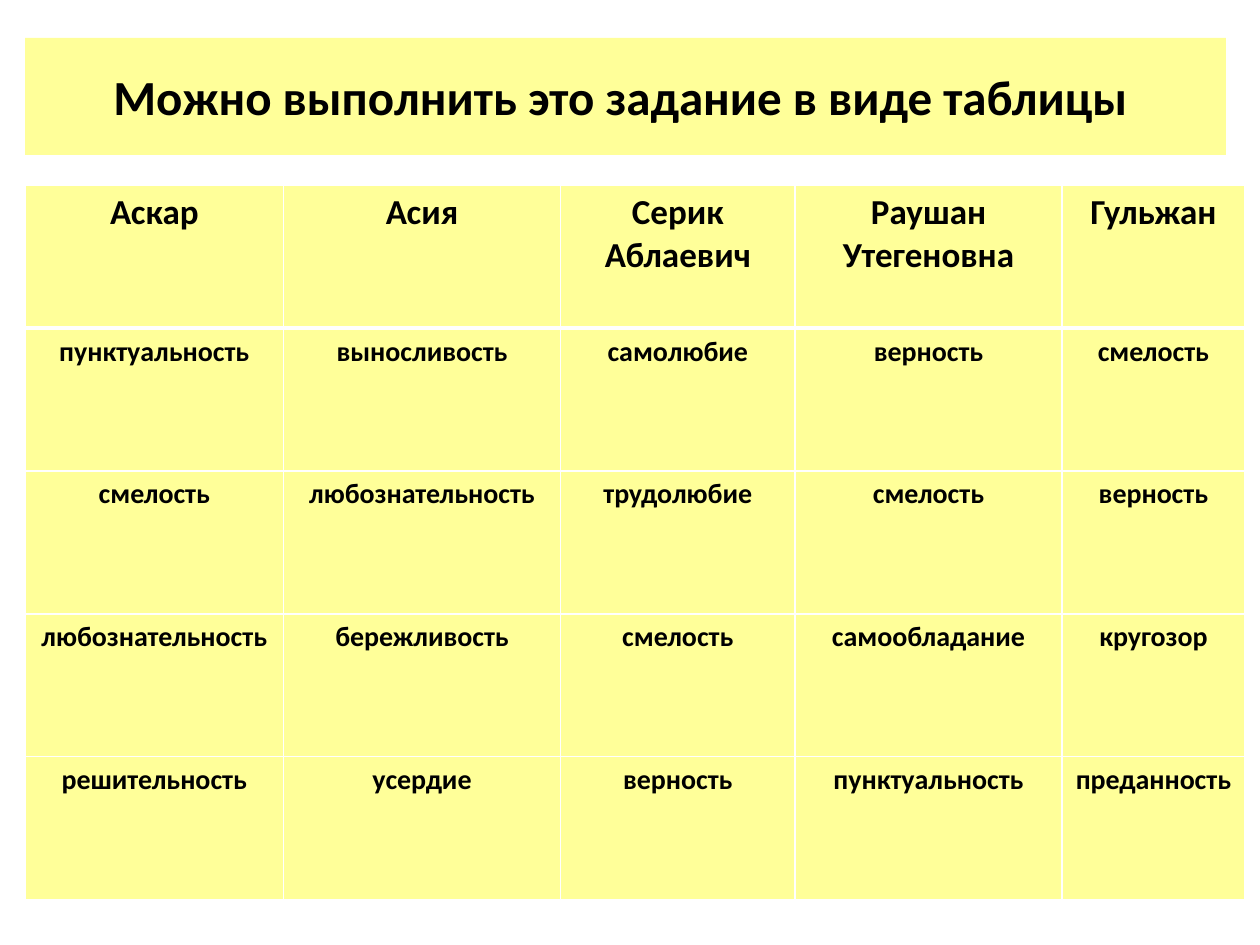
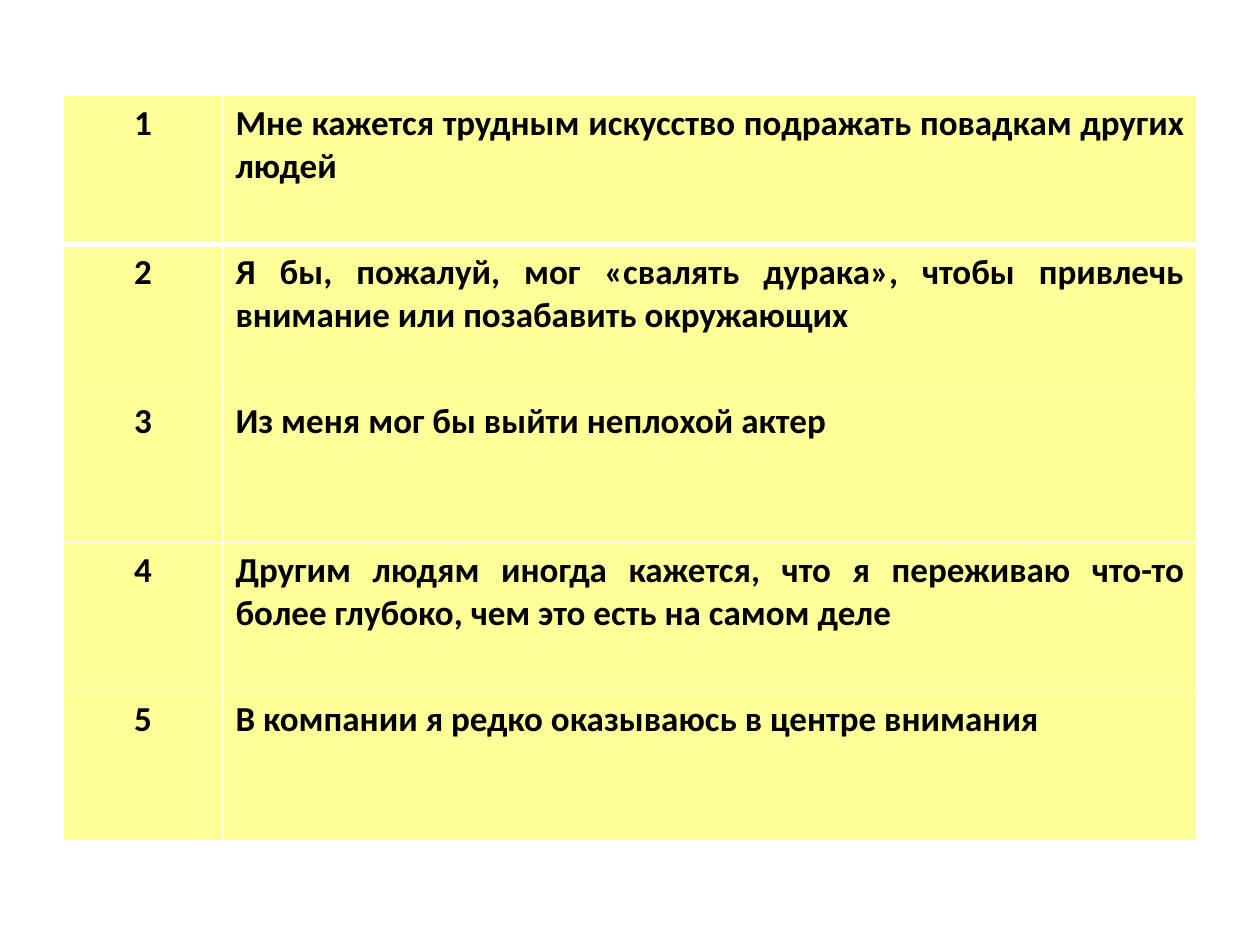
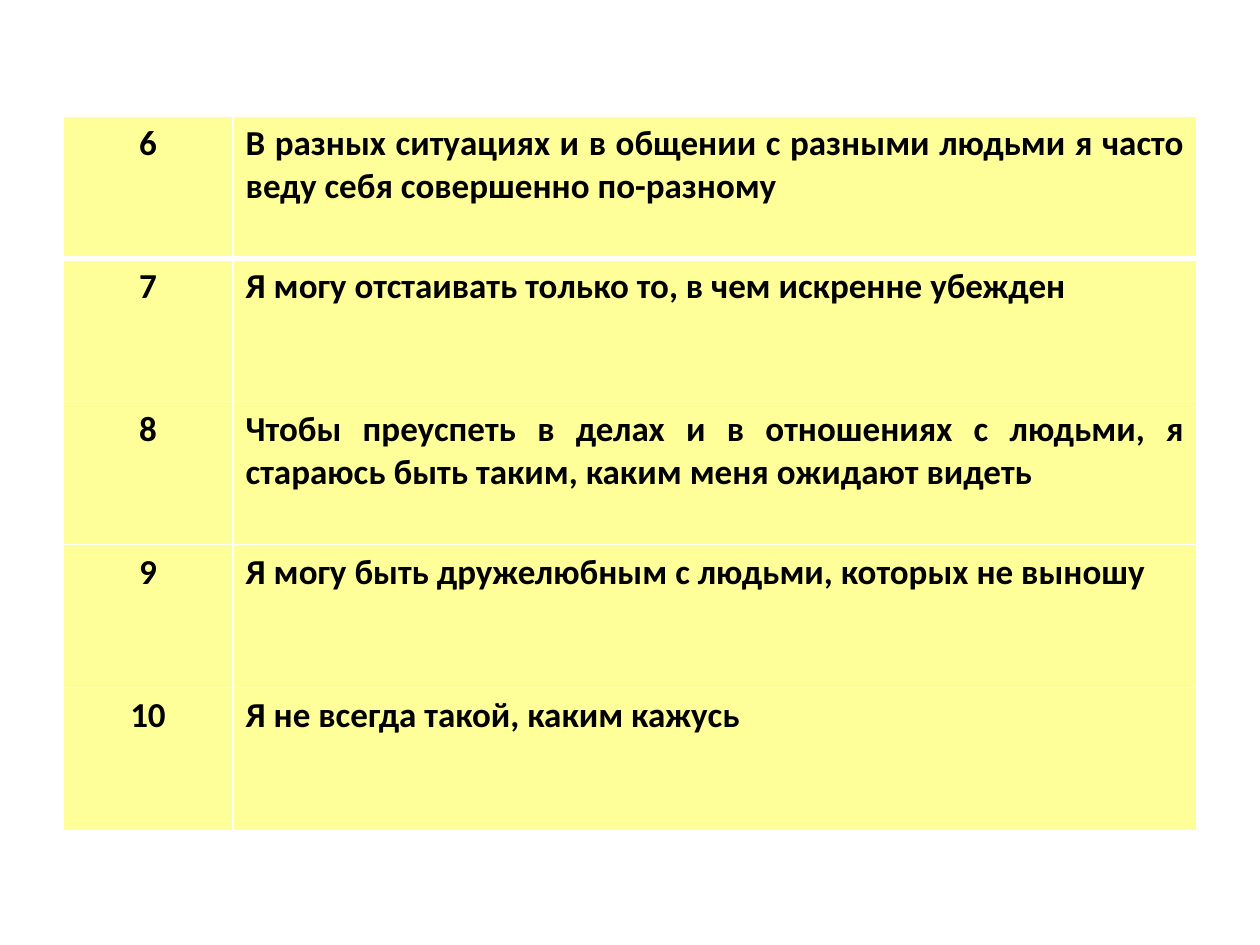
from dataclasses import dataclass

from lxml import etree
from pptx import Presentation
from pptx import util as u
from pptx.dml.color import RGBColor
from pptx.enum import text
from pptx.oxml.ns import qn

# Shared look
EMU_PER_PX = 9144  # 100 px to the inch
FONT = "Calibri"
INK = "000000"
PANEL = "FFFF99"
RULE = "FFFFFF"
TITLE_ONLY, BLANK = 5, 6
CENTER = text.PP_ALIGN.CENTER
JUSTIFY = text.PP_ALIGN.JUSTIFY


@dataclass
class Grid:
    left: int
    top: int
    height: int
    widths: list[int]
    aligns: list[text.PP_ALIGN]
    rows: list[list[str]]
    body_size: int = 20
    header_size: int = 20


def px(length: int) -> u.Emu:
    return u.Emu(length * EMU_PER_PX)


def paint(fill, color: str) -> None:
    fill.solid()
    fill.fore_color.rgb = RGBColor.from_string(color)


def write(frame, words: str, size: int, align: text.PP_ALIGN) -> None:
    frame.text = words
    paragraph = frame.paragraphs[0]
    paragraph.alignment = align
    for run in paragraph.runs:
        run.font.name = FONT
        run.font.size = u.Pt(size)
        run.font.bold = True
        run.font.color.rgb = RGBColor.from_string(INK)


def rule_cell(cell, row: int) -> None:
    """Thin rules all round, with a thick one under the first row."""
    points = {"L": 1, "R": 1, "T": 3 if row == 1 else 1, "B": 3 if row == 0 else 1}
    properties = cell._tc.get_or_add_tcPr()
    for side, width in points.items():
        line = etree.SubElement(properties, qn(f"a:ln{side}"), w=str(u.Pt(width)))
        solid = etree.SubElement(line, qn("a:solidFill"))
        etree.SubElement(solid, qn("a:srgbClr"), val=RULE)


def draw_title(slide, words: str) -> None:
    title = slide.shapes.title
    title.left, title.top, title.width, title.height = map(px, (20, 30, 953, 93))
    paint(title.fill, PANEL)
    title.text_frame.vertical_anchor = text.MSO_ANCHOR.MIDDLE
    write(title.text_frame, words, 28, CENTER)


def draw_grid(slide, grid: Grid) -> None:
    table = slide.shapes.add_table(
        len(grid.rows), len(grid.widths), px(grid.left), px(grid.top),
        px(sum(grid.widths)), px(grid.height),
    ).table
    for column, width in zip(table.columns, grid.widths):
        column.width = px(width)
    for r, row in enumerate(grid.rows):
        size = grid.body_size if r else grid.header_size
        for c, words in enumerate(row):
            cell = table.cell(r, c)
            rule_cell(cell, r)
            paint(cell.fill, PANEL)
            write(cell.text_frame, words, size, grid.aligns[c])


def statement_grid(first: int, top: int, height: int, widths: list[int],
                   statements: list[str]) -> Grid:
    rows = [[str(number), words] for number, words in enumerate(statements, first)]
    return Grid(50, top, height, widths, [CENTER, JUSTIFY], rows)


# Content
QUALITIES = Grid(
    20, 147, 567, [205, 220, 186, 212, 145], [CENTER] * 5,
    [
        ["Аскар", "Асия", "Серик Аблаевич", "Раушан Утегеновна", "Гульжан"],
        ["пунктуальность", "выносливость", "самолюбие", "верность", "смелость"],
        ["смелость", "любознательность", "трудолюбие", "смелость", "верность"],
        ["любознательность", "бережливость", "смелость", "самообладание", "кругозор"],
        ["решительность", "усердие", "верность", "пунктуальность", "преданность"],
    ],
    body_size=16,
)

QUESTIONNAIRE = [
    statement_grid(1, 76, 591, [127, 773], [
        "Мне кажется трудным искусство подражать повадкам других людей",
        "Я бы, пожалуй, мог «свалять дурака», чтобы привлечь внимание или позабавить окружающих",
        "Из меня мог бы выйти неплохой актер",
        "Другим людям иногда кажется, что я переживаю что-то более глубоко, чем это есть на самом деле",
        "В компании я редко оказываюсь в центре внимания",
    ]),
    statement_grid(6, 92, 567, [135, 765], [
        "В разных ситуациях и в общении с разными людьми я часто веду себя совершенно по-разному",
        "Я могу отстаивать только то, в чем искренне убежден",
        "Чтобы преуспеть в делах и в отношениях с людьми, я стараюсь быть таким, каким меня ожидают видеть",
        "Я могу быть дружелюбным с людьми, которых не выношу",
        "Я не всегда такой, каким кажусь",
    ]),
]


def main() -> None:
    deck = Presentation()
    deck.slide_width, deck.slide_height = px(1000), px(750)

    # Qualities of each person
    qualities = deck.slides.add_slide(deck.slide_layouts[TITLE_ONLY])
    draw_title(qualities, "Можно выполнить это задание в виде таблицы ")
    draw_grid(qualities, QUALITIES)

    # Numbered statements
    for statements in QUESTIONNAIRE:
        draw_grid(deck.slides.add_slide(deck.slide_layouts[BLANK]), statements)

    deck.save("out.pptx")


if __name__ == "__main__":
    main()
